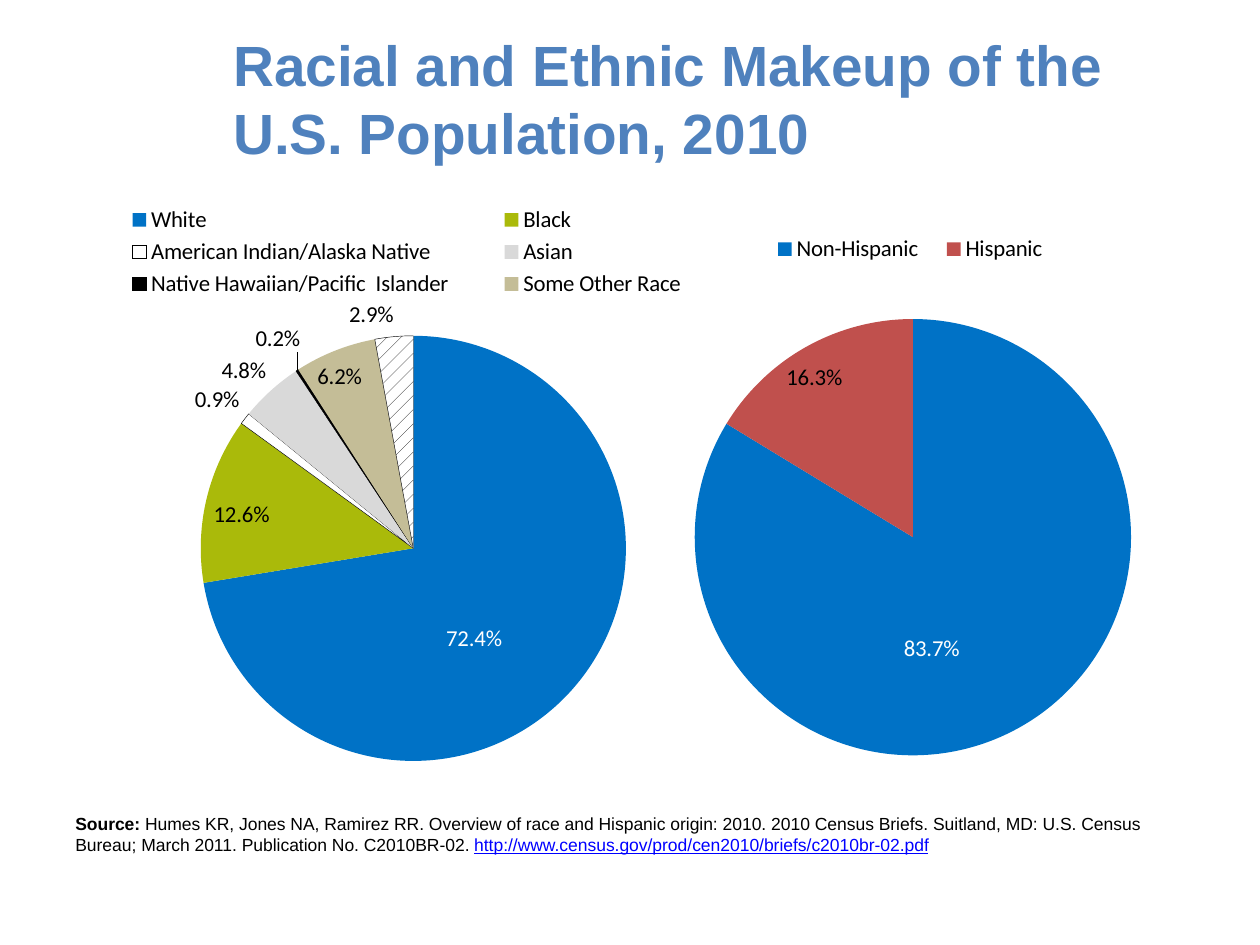
from dataclasses import dataclass

from lxml import etree
from pptx import Presentation
from pptx.chart.data import CategoryChartData
from pptx.dml.color import RGBColor
from pptx.enum.chart import XL_CHART_TYPE as ChartType
from pptx.enum.chart import XL_LABEL_POSITION as Pos
from pptx.enum.chart import XL_LEGEND_POSITION as LegendPos
from pptx.enum.dml import MSO_PATTERN as Pattern
from pptx.enum.text import MSO_ANCHOR as Anchor
from pptx.enum.text import MSO_AUTO_SIZE as AutoSize
from pptx.enum.text import PP_ALIGN as Align
from pptx.oxml.ns import qn
from pptx.util import Inches, Pt


@dataclass(frozen=True)
class Theme:
    title: str = "4F81BD"
    black: str = "000000"
    white: str = "FFFFFF"
    link: str = "0000FF"
    blue: str = "0072C6"
    green: str = "AABA0A"
    grey: str = "D9D9D9"
    tan: str = "C4BD97"
    red: str = "C0504D"
    body_font: str = "Arial"
    chart_font: str = "Calibri"
    title_size: float = 32.4
    chart_size: float = 13
    source_size: float = 10


@dataclass(frozen=True)
class Slice:
    """One pie slice; a slice without a name has no legend entry."""
    name: str
    value: float
    color: str
    pos: Pos = Pos.OUTSIDE_END
    label_color: str = Theme.black
    shift: tuple = ()
    outlined: bool = False
    hatched: bool = False


T = Theme()
RACE = [
    Slice("White", 0.724, T.blue, Pos.CENTER, T.white, (-0.03, 0.04)),
    Slice("Black", 0.126, T.green, Pos.INSIDE_END),
    Slice("American Indian/Alaska Native", 0.009, T.white, outlined=True),
    Slice("Asian", 0.048, T.grey),
    Slice("Native Hawaiian/Pacific  Islander", 0.002, T.black,
          shift=(0.01, -0.02), outlined=True),
    Slice("Some Other Race", 0.062, T.tan, Pos.INSIDE_END, shift=(-0.03, 0.01)),
    Slice("", 0.029, T.white, outlined=True, hatched=True),
]
ETHNICITY = [
    Slice("Non-Hispanic", 0.837, T.blue, Pos.CENTER, T.white, (-0.06, 0.03)),
    Slice("Hispanic", 0.163, T.red, Pos.INSIDE_END, shift=(-0.04, 0.02)),
]


def rgb(color):
    return RGBColor.from_string(color)


def set_font(font, name, size, color, bold=False):
    font.name, font.size, font.bold = name, Pt(size), bold
    font.color.rgb = rgb(color)


def add_run(p, text, size, color, bold=False, underline=False):
    r = p.add_run()
    r.text = text
    set_font(r.font, T.body_font, size, color, bold)
    r.font.underline = underline


def make_layout(**values):
    """Build a manual c:layout; values are shares of the chart's size."""
    layout = etree.Element(qn("c:layout"))
    manual = etree.SubElement(layout, qn("c:manualLayout"))
    for tag, val in values.items():
        etree.SubElement(manual, qn(f"c:{tag}")).set("val", str(val))
    return layout


def area_layout(area, **target):
    x, y, w, h = area
    return make_layout(**target, xMode="edge", yMode="edge", x=x, y=y, w=w, h=h)


def style_slice(series, i, item):
    point = series.points[i]
    fill = point.format.fill
    if item.hatched:
        fill.patterned()
        fill.pattern = Pattern.PERCENT_10
        fill.fore_color.rgb = rgb(T.black)
        fill.back_color.rgb = rgb(item.color)
    else:
        fill.solid()
        fill.fore_color.rgb = rgb(item.color)
    line = point.format.line
    if item.outlined:
        line.color.rgb = rgb(T.black)
        line.width = Pt(0.25)
    else:
        line.fill.background()
    label = point.data_label
    set_font(label.font, T.chart_font, T.chart_size, item.label_color)
    label.position = item.pos
    if item.shift:
        x, y = item.shift
        idx = series._element.xpath(f"c:dLbls/c:dLbl/c:idx[@val='{i}']")[0]
        idx.addnext(make_layout(x=x, y=y))


def style_legend(chart, slices, area):
    chart.has_legend = True
    legend = chart.legend
    legend.position = LegendPos.TOP
    legend.include_in_layout = False
    set_font(legend.font, T.chart_font, T.chart_size, T.black)
    el = legend._element
    for old in el.findall(qn("c:layout")):
        el.remove(old)
    anchor = el.find(qn("c:legendPos"))
    anchor.addnext(area_layout(area))
    for i, item in reversed(list(enumerate(slices))):
        if not item.name:
            entry = etree.Element(qn("c:legendEntry"))
            etree.SubElement(entry, qn("c:idx")).set("val", str(i))
            etree.SubElement(entry, qn("c:delete")).set("val", "1")
            anchor.addnext(entry)


def add_pie(slide, slices, left, width, plot_area, legend_area):
    data = CategoryChartData(number_format="0.0%")
    data.categories = [item.name for item in slices]
    data.add_series("Series 1", [item.value for item in slices])
    chart = slide.shapes.add_chart(
        ChartType.PIE, Inches(left), Inches(1.6), Inches(width), Inches(4.44),
        data).chart
    chart.has_title = False
    set_font(chart.font, T.chart_font, T.chart_size, T.black)
    plot = chart.plots[0]
    plot.vary_by_categories = True
    series = plot.series[0]
    labels = series.data_labels
    labels.show_value = True
    labels.number_format = "0.0%"
    labels.number_format_is_linked = False
    set_font(labels.font, T.chart_font, T.chart_size, T.black)
    for i, item in enumerate(slices):
        style_slice(series, i, item)
    style_legend(chart, slices, legend_area)
    area = chart._chartSpace.chart.plotArea
    for old in area.findall(qn("c:layout")):
        area.remove(old)
    area.insert(0, area_layout(plot_area, layoutTarget="inner"))


def set_title(slide, text):
    sp = slide.shapes.title
    sp.left, sp.top = Inches(1.75), Inches(0.3)
    sp.width, sp.height = Inches(7.75), Inches(0.95)
    tf = sp.text_frame
    tf.auto_size, tf.word_wrap = AutoSize.NONE, True
    tf.vertical_anchor = Anchor.MIDDLE
    p = tf.paragraphs[0]
    p.alignment = Align.LEFT
    add_run(p, text, T.title_size, T.title, bold=True)


def add_source(slide):
    sp = slide.shapes.add_textbox(Inches(0.5), Inches(6.4), Inches(9), Inches(0.44))
    sp.text_frame.word_wrap = True
    p = sp.text_frame.paragraphs[0]
    add_run(p, "Source: ", T.source_size, T.black, bold=True)
    add_run(p, "Humes KR, Jones NA, Ramirez RR. Overview of race and Hispanic "
               "origin: 2010. 2010 Census Briefs. Suitland, MD: U.S. Census Bureau; "
               "March 2011. Publication No. C2010BR-02. ", T.source_size, T.black)
    add_run(p, "http://www.census.gov/prod/cen2010/briefs/c2010br-02.pdf",
            T.source_size, T.link, underline=True)


def main():
    prs = Presentation()
    prs.slide_width, prs.slide_height = Inches(10), Inches(7.5)
    slide = prs.slides.add_slide(prs.slide_layouts[5])
    set_title(slide, "Racial and Ethnic Makeup of the U.S. Population, 2010")
    add_source(slide)
    add_pie(slide, RACE, 0.5, 5.4, (0.2, 0.24, 0.63, 0.76), (0.03, 0, 0.95, 0.18))
    add_pie(slide, ETHNICITY, 4.9, 4.6, (0.13, 0.21, 0.76, 0.78), (0.24, 0.05, 0.53, 0.07))
    prs.save("out.pptx")


if __name__ == "__main__":
    main()
